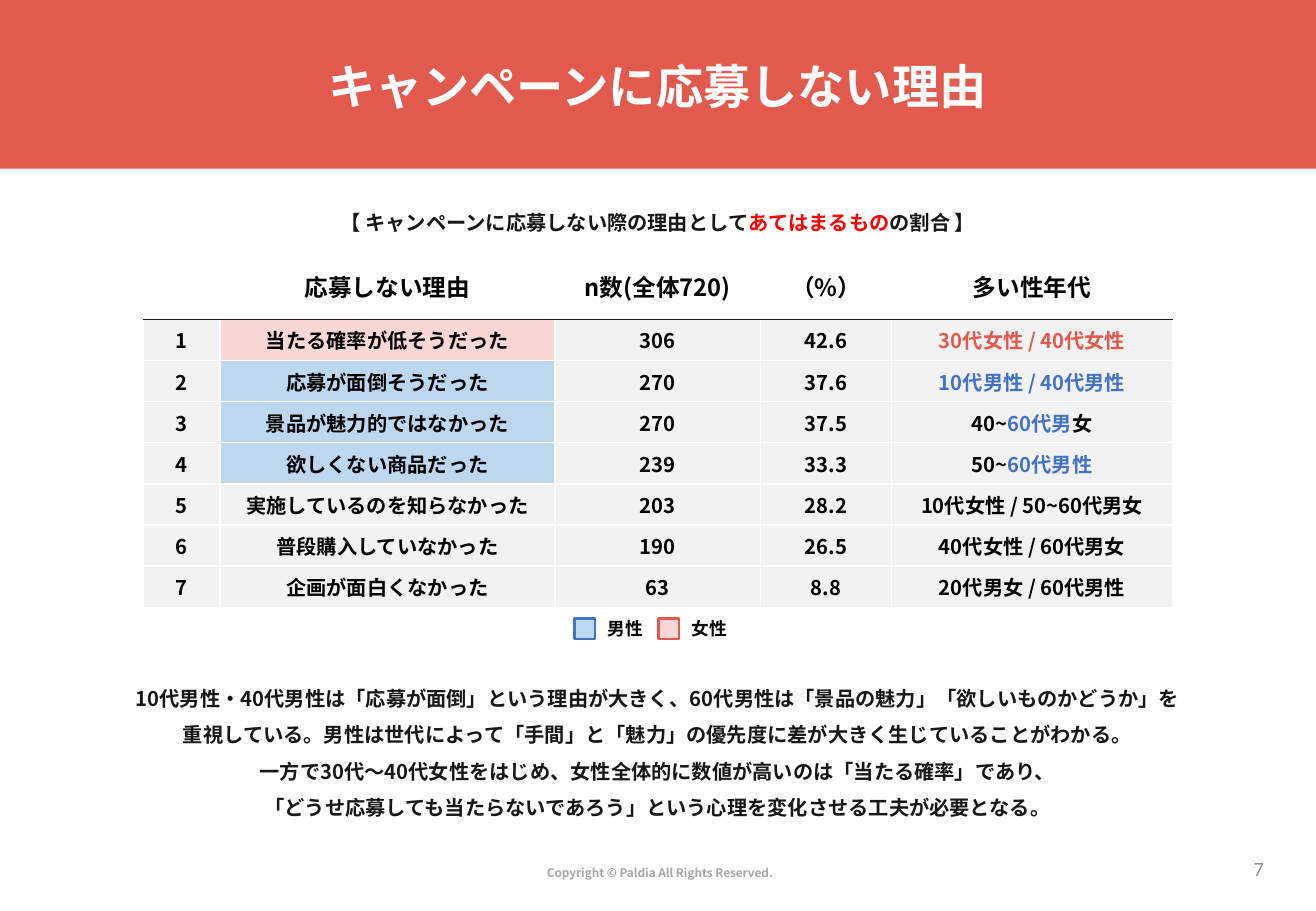
from lxml import etree
from pptx import Presentation
from pptx.dml.color import RGBColor
from pptx.enum.shapes import MSO_SHAPE
from pptx.enum.text import MSO_ANCHOR, MSO_AUTO_SIZE, PP_ALIGN
from pptx.oxml.ns import qn
from pptx.util import Cm, Pt

LEFT, CENTER, RIGHT = PP_ALIGN.LEFT, PP_ALIGN.CENTER, PP_ALIGN.RIGHT
TOP, MIDDLE = MSO_ANCHOR.TOP, MSO_ANCHOR.MIDDLE
NO_AUTOFIT = MSO_AUTO_SIZE.NONE
RECTANGLE = MSO_SHAPE.RECTANGLE

JAPANESE, LATIN = "Noto Sans CJK JP", "Calibri"
WHITE, BLACK, INK, ALERT = "FFFFFF", "000000", "181717", "FF0000"
CORAL, PINK = "E25A4E", "F8D7D4"
BLUE, SKY = "4472C4", "BDD7EE"
PALE, SILVER, GREY = "F2F2F2", "A6A6A6", "8C8C8C"

COLUMN_WIDTHS = [1.6, 7, 4.3, 2.74, 5.87]
HEADER_HEIGHT, ROW_HEIGHT = 1.4, 0.86
HEADERS = ["", "応募しない理由", "n数(全体720)", "（%）", "多い性年代"]
# reason, fill of the reason, count, percentage, coloured spans of the age groups
REASONS = [
    ("当たる確率が低そうだった", PINK, "306", "42.6", [("30代女性 / 40代女性", CORAL)]),
    ("応募が面倒そうだった", SKY, "270", "37.6", [("10代男性 / 40代男性", BLUE)]),
    ("景品が魅力的ではなかった", SKY, "270", "37.5",
     [("40~", BLACK), ("60代男", BLUE), ("女", BLACK)]),
    ("欲しくない商品だった", SKY, "239", "33.3", [("50~", BLACK), ("60代男性", BLUE)]),
    ("実施しているのを知らなかった", PALE, "203", "28.2", [("10代女性 / 50~60代男女", BLACK)]),
    ("普段購入していなかった", PALE, "190", "26.5", [("40代女性 / 60代男女", BLACK)]),
    ("企画が面白くなかった", PALE, "63", "8.8", [("20代男女 / 60代男性", BLACK)]),
]
FINDINGS = [
    "10代男性・40代男性は「応募が面倒」という理由が大きく、60代男性は「景品の魅力」「欲しいものかどうか」を",
    "重視している。男性は世代によって「手間」と「魅力」の優先度に差が大きく生じていることがわかる。",
    "一方で30代～40代女性をはじめ、女性全体的に数値が高いのは「当たる確率」であり、",
    "「どうせ応募しても当たらないであろう」という心理を変化させる工夫が必要となる。",
]


def color(value):
    return RGBColor.from_string(value)


class SlideBuilder:
    def __init__(self, page):
        self.page = page

    def add_spans(self, para, spans, size, font=JAPANESE, bold=True, align=CENTER, spacing=1.0):
        """Add (text, colour) spans to a paragraph."""
        para.alignment = align
        para.line_spacing = spacing
        for text, ink in spans:
            span = para.add_run()
            span.text = text
            span.font.name = font
            span.font.size = Pt(size)
            span.font.bold = bold
            span.font.color.rgb = color(ink)
            east_asian = etree.SubElement(span.font._element, qn("a:ea"))
            east_asian.set("typeface", JAPANESE)

    def title(self, text, left, top, width, height):
        title = self.page.shapes.title
        title.left, title.top, title.width, title.height = map(Cm, (left, top, width, height))
        title.text_frame.auto_size = NO_AUTOFIT
        title.text_frame.vertical_anchor = MIDDLE
        self.add_spans(title.text_frame.paragraphs[0], [(text, WHITE)], 28, spacing=0.9)

    def text(self, lines, left, top, width, height, size, anchor=TOP, **style):
        """Add a text box; each line is a list of (text, colour) spans."""
        box = self.page.shapes.add_textbox(*map(Cm, (left, top, width, height)))
        frame = box.text_frame
        frame.word_wrap = True
        frame.vertical_anchor = anchor
        for index, spans in enumerate(lines):
            para = frame.add_paragraph() if index else frame.paragraphs[0]
            self.add_spans(para, spans, size, **style)

    def rectangle(self, left, top, width, height, fill, line=None):
        box = self.page.shapes.add_shape(RECTANGLE, *map(Cm, (left, top, width, height)))
        box.shadow.inherit = False
        box.fill.solid()
        box.fill.fore_color.rgb = color(fill)
        if line:
            box.line.color.rgb = color(line)
            box.line.width = Pt(1.5)
        else:
            box.line.fill.background()
        return box

    def cell(self, cell, spans, size, fill, top=WHITE, bottom=WHITE):
        properties = cell._tc.get_or_add_tcPr()
        for side, ink in (("L", WHITE), ("R", WHITE), ("T", top), ("B", bottom)):
            line = etree.SubElement(properties, qn(f"a:ln{side}"), w=str(Pt(1)))
            solid = etree.SubElement(line, qn("a:solidFill"))
            etree.SubElement(solid, qn("a:srgbClr"), val=ink)
        cell.fill.solid()
        cell.fill.fore_color.rgb = color(fill)
        cell.vertical_anchor = MIDDLE
        self.add_spans(cell.text_frame.paragraphs[0], spans, size)

    def reason_table(self, left, top):
        height = HEADER_HEIGHT + ROW_HEIGHT * len(REASONS)
        table = self.page.shapes.add_table(
            len(REASONS) + 1, len(HEADERS),
            *map(Cm, (left, top, sum(COLUMN_WIDTHS), height))).table
        table.first_row = table.horz_banding = False
        for column, width in zip(table.columns, COLUMN_WIDTHS):
            column.width = Cm(width)
        for index, row in enumerate(table.rows):
            row.height = Cm(ROW_HEIGHT if index else HEADER_HEIGHT)
        for column, header in enumerate(HEADERS):
            spans = [(header, BLACK)] if header else []
            self.cell(table.cell(0, column), spans, 14, WHITE, bottom=INK)
        for rank, (reason, reason_fill, count, percent, ages) in enumerate(REASONS, 1):
            plain = [[(text, BLACK)] for text in (str(rank), reason, count, percent)]
            for column, spans in enumerate(plain + [ages]):
                fill = reason_fill if column == 1 else PALE
                self.cell(table.cell(rank, column), spans, 12, fill,
                          top=INK if rank == 1 else WHITE)


def main():
    deck = Presentation()
    deck.slide_width, deck.slide_height = Cm(27.51), Cm(19.05)
    page = deck.slides.add_slide(deck.slide_layouts[5])
    builder = SlideBuilder(page)

    band = builder.rectangle(0, 0, 27.51, 3.53, CORAL)
    page.shapes.title.element.addprevious(band.element)
    builder.title("キャンペーンに応募しない理由", 1.88, 0.79, 23.72, 2.13)

    builder.text([[("【 キャンペーンに応募しない際の理由として", INK),
                   ("あてはまるもの", ALERT), ("の割合 】", INK)]],
                 2.77, 4.01, 21.97, 0.97, 12, spacing=1.5)
    builder.reason_table(3, 5.28)

    for left, label, fill, line in ((12.01, "男性", SKY, BLUE), (13.77, "女性", PINK, CORAL)):
        builder.rectangle(left, 12.93, 0.43, 0.43, fill, line)
        builder.text([[(label, BLACK)]], left + 0.44, 12.8, 1.27, 0.71, 10.5,
                     font=LATIN, align=LEFT)

    builder.text([[(line, INK)] for line in FINDINGS],
                 1.14, 13.97, 25.22, 3.25, 12, spacing=1.5)
    builder.text([[("Copyright © Paldia All Rights Reserved.", SILVER)]],
                 6.91, 17.98, 13.77, 0.56, 7)
    builder.text([[("7", GREY)]], 20.47, 17.65, 6.2, 1.02, 12, anchor=MIDDLE,
                 font=LATIN, bold=False, align=RIGHT)
    deck.save("out.pptx")


if __name__ == "__main__":
    main()
